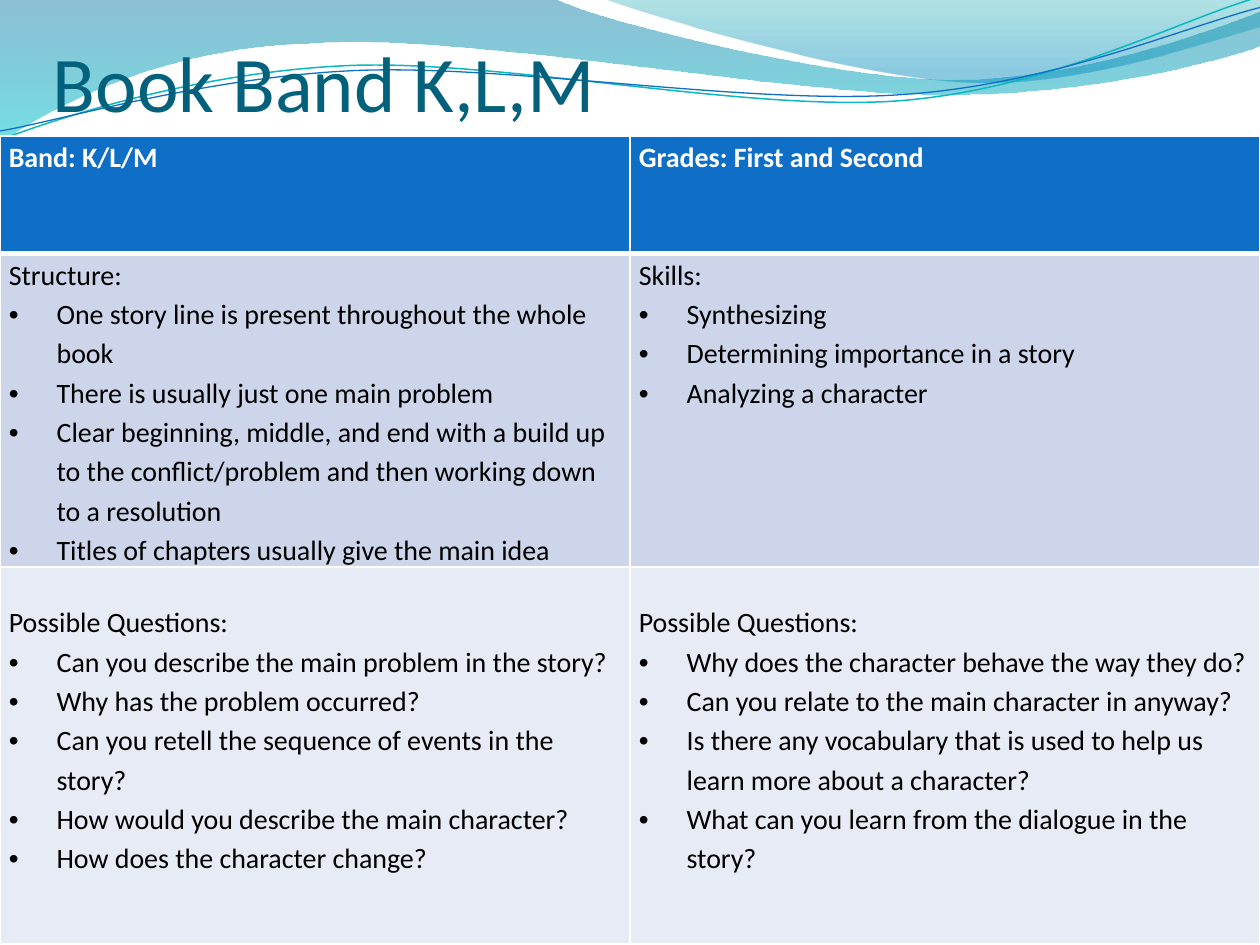
from math import cos, radians, sin

from lxml.etree import SubElement
from pptx import Presentation
from pptx.dml.color import RGBColor
from pptx.enum.text import MSO_ANCHOR
from pptx.oxml import parse_xml
from pptx.oxml.ns import nsdecls, qn
from pptx.util import Inches, Pt

FONT = "Calibri"
WHITE = "FFFFFF"
BLUE = "0F6FC6"
BLACK = "000000"
TILT = -2.7

WAVES = [
    {"start": (0, 0),
     "segments": [[(4.4, -0.01)],
                  [(4.76, 0.17), (6.64, 0.63), (7.58, 0.63)],
                  [(8.53, 0.63), (9.58, 0.26), (10, 0.09)],
                  [(10.01, 0.36)],
                  [(9.83, 0.44), (8.7, 0.76), (7.46, 0.75)],
                  [(6.22, 0.75), (3.82, 0.28), (2.57, 0.34)],
                  [(1.29, 0.36), (0.46, 0.83), (-0.01, 1.13)],
                  [(0, 0)]],
     "stops": [(0, "0074A1", 45), (100, "00C6CF", 55)]},
    {"start": (4.79, -0.01),
     "segments": [[(5.09, 0.11), (6.82, 0.62), (7.69, 0.65)],
                  [(8.56, 0.69), (9.61, 0.32), (10, 0.21)],
                  [(10, 0)],
                  [(4.79, -0.01)]],
     "stops": [(0, "00A1A9", 30), (80, "008BBF", 45)]},
    {"start": (0, 1.11),
     "segments": [[(0.48, 0.93), (1.58, 0.57), (2.77, 0.52)],
                  [(3.95, 0.47), (5.93, 0.89), (7.13, 0.8)],
                  [(8.33, 0.71), (9.38, 0.15), (9.98, -0.02)]],
     "center": (4.99, 0.58), "line": ("0AB8BF", 0.85)},
    {"start": (0, 1.04),
     "segments": [[(0.47, 0.96), (1.64, 0.61), (2.83, 0.56)],
                  [(4.03, 0.51), (5.97, 0.84), (7.17, 0.75)],
                  [(8.36, 0.67), (9.41, 0.21), (10, 0.06)]],
     "center": (5, 0.59), "line": (BLUE, 0.75)},
]

HEADINGS = ["Band: K/L/M", "Grades: First and Second"]
FEATURES = [
    ("Structure:", [
        "One story line is present throughout the whole book",
        "There is usually just one main problem",
        "Clear beginning, middle, and end with a build up to the "
        "conflict/problem and then working down to a resolution",
        "Titles of chapters usually give the main idea"]),
    ("Skills:", [
        "Synthesizing",
        "Determining importance in a story",
        "Analyzing a character"]),
]
QUESTIONS = [
    ("Possible Questions:", [
        "Can you describe the main problem in the story?",
        "Why has the problem occurred?",
        "Can you retell the sequence of events in the story?",
        "How would you describe the main character?",
        "How does the character change?"]),
    ("Possible Questions:", [
        "Why does the character behave the way they do?",
        "Can you relate to the main character in anyway?",
        "Is there any vocabulary that is used to help us learn more "
        "about a character?",
        "What can you learn from the dialogue in the story?"]),
]


def color(value):
    return RGBColor.from_string(value)


def format_runs(paragraph, size, value, bold=False):
    for run in paragraph.runs:
        run.font.name = FONT
        run.font.size = Pt(size)
        run.font.bold = bold
        run.font.color.rgb = color(value)


def level(point, center):
    angle = radians(-TILT)
    dx, dy = point[0] - center[0], point[1] - center[1]
    return (center[0] + dx * cos(angle) - dy * sin(angle),
            center[1] + dx * sin(angle) + dy * cos(angle))


def bend(wave, segments):
    lines = wave._element.spPr.findall(".//" + qn("a:lnTo"))
    for segment in segments:
        first, *rest = lines[:len(segment)]
        lines = lines[len(segment):]
        if rest:
            first.tag = qn("a:cubicBezTo")
            for line in rest:
                first.append(line[0])
                line.getparent().remove(line)


def fill_gradient(wave, stops):
    stop_xml = "".join(
        f'<a:gs pos="{position * 1000}"><a:srgbClr val="{value}">'
        f'<a:alpha val="{opacity * 1000}"/></a:srgbClr></a:gs>'
        for position, value, opacity in stops)
    gradient = parse_xml(
        f'<a:gradFill {nsdecls("a")} rotWithShape="1"><a:gsLst>{stop_xml}</a:gsLst>'
        '<a:lin ang="5400000" scaled="0"/></a:gradFill>')
    wave._element.spPr.find(qn("a:custGeom")).addnext(gradient)


def add_waves(slide, left, top):
    for design in WAVES:
        segments = design["segments"]
        points = [design["start"], *sum(segments, [])]
        if "center" in design:
            points = [level(point, design["center"]) for point in points]
        points = [(left + Inches(x), top + Inches(y)) for x, y in points]
        builder = slide.shapes.build_freeform(*points[0])
        builder.add_line_segments(points[1:], close="stops" in design)
        wave = builder.convert_to_shape()
        bend(wave, segments)
        wave.shadow.inherit = False
        if "stops" in design:
            fill_gradient(wave, design["stops"])
            wave.line.fill.background()
        else:
            value, width = design["line"]
            wave.rotation = TILT
            wave.fill.background()
            wave.line.color.rgb = color(value)
            wave.line.width = Pt(width)


def add_title(slide, left, top, width, height):
    title = slide.shapes.add_textbox(left, top, width, height).text_frame
    title.word_wrap = True
    title.vertical_anchor = MSO_ANCHOR.BOTTOM
    title.margin_left = title.margin_right = title.margin_bottom = 0
    title.margin_top = Inches(0.05)
    title.text = "Book Band K,L,M"
    format_runs(title.paragraphs[0], 45, "04617B")


def style_cell(cell, fill, top_border, bottom_border, top_margin):
    cell.margin_left = cell.margin_right = Inches(0.07)
    cell.margin_top, cell.margin_bottom = top_margin, 0
    borders = {"lnL": 1, "lnR": 1, "lnT": top_border, "lnB": bottom_border}
    for side, width in borders.items():
        border = SubElement(cell._tc.get_or_add_tcPr(), qn(f"a:{side}"), w=str(Pt(width)))
        solid = SubElement(border, qn("a:solidFill"))
        SubElement(solid, qn("a:srgbClr"), val=WHITE)
    cell.fill.solid()
    cell.fill.fore_color.rgb = color(fill)


def write_cell(cell, heading, items, value, bold):
    cell.text_frame.text = "\n".join([heading, *items])
    for index, paragraph in enumerate(cell.text_frame.paragraphs):
        paragraph.line_spacing = 1.15
        format_runs(paragraph, 16, value, bold)
        if index:
            properties = paragraph._p.get_or_add_pPr()
            properties.set("marL", str(Inches(0.38)))
            properties.set("indent", str(Inches(-0.38)))
            SubElement(properties, qn("a:buFont"), typeface="Arial")
            SubElement(properties, qn("a:buChar"), char="•")


def add_band_table(slide, left, top, width, height):
    rows = [
        (0.93, [(heading, []) for heading in HEADINGS], BLUE, WHITE, 1, 3, 0),
        (2.49, FEATURES, "CCD5EA", BLACK, 3, 1, 0),
        (2.99, QUESTIONS, "E7EBF5", BLACK, 1, 1, 0.27),
    ]
    table = slide.shapes.add_table(len(rows), 2, left, top, width, height).table
    table.first_row = table.horz_banding = False
    for row_index, (row_height, texts, fill, value, above, below, margin) in enumerate(rows):
        table.rows[row_index].height = Inches(row_height)
        for column, (heading, items) in enumerate(texts):
            cell = table.cell(row_index, column)
            style_cell(cell, fill, above, below, Inches(margin))
            write_cell(cell, heading, items, value, bold=row_index == 0)


def main():
    presentation = Presentation()
    presentation.slide_width = Inches(10)
    presentation.slide_height = Inches(7.5)
    slide = presentation.slides.add_slide(presentation.slide_layouts[6])
    add_waves(slide, 0, 0)
    add_title(slide, Inches(0.42), Inches(0.17), Inches(9), Inches(0.85))
    add_band_table(slide, 0, Inches(1.08), Inches(10), Inches(6.41))
    presentation.save("out.pptx")


if __name__ == "__main__":
    main()
